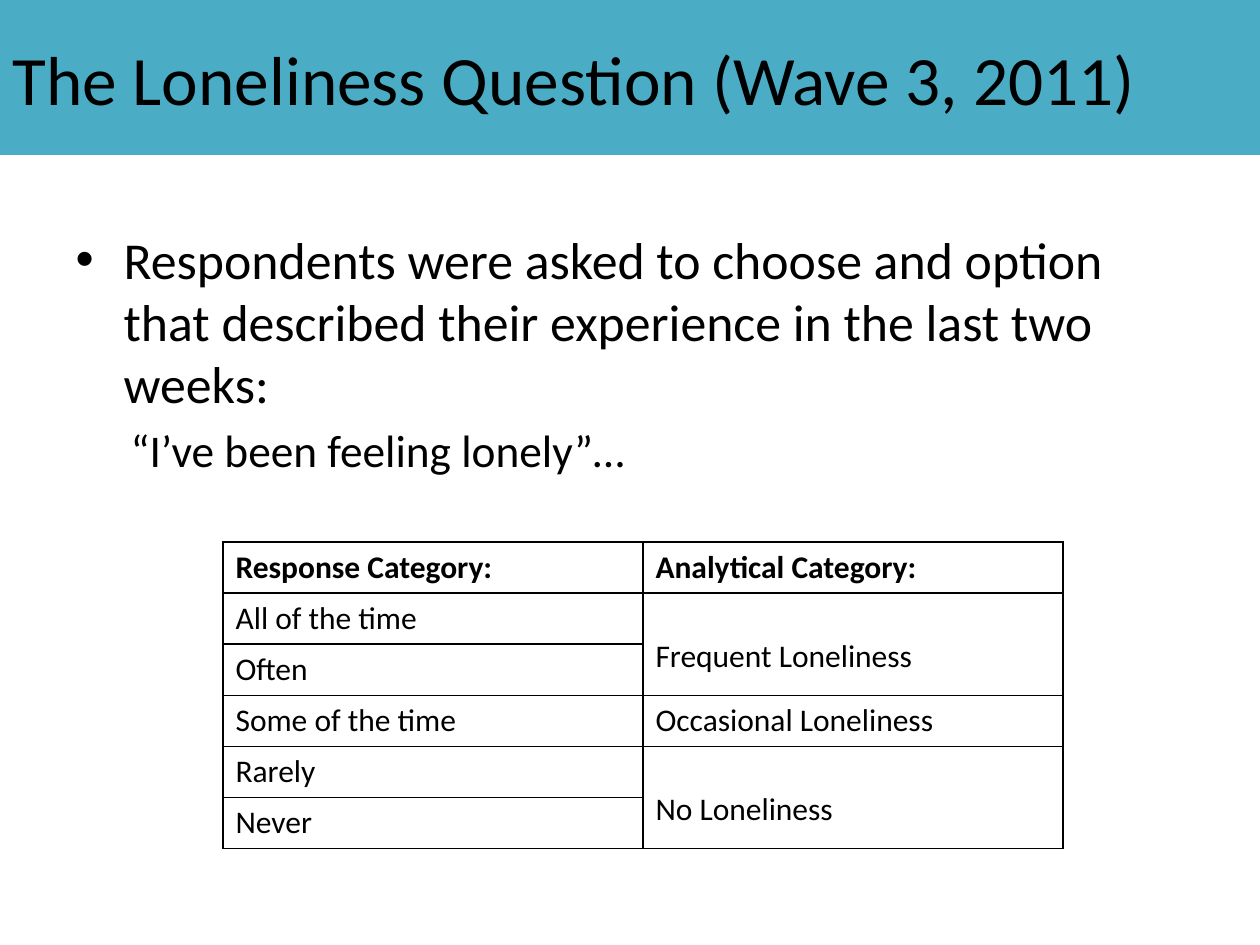
import pptx
import pptx.dml.color
import pptx.enum.text
import pptx.oxml
import pptx.oxml.ns
import pptx.util

PX = 914400 / 126
FONT = "Calibri"
COLORS = {"band": "4BACC6", "ink": "000000", "paper": "FFFFFF"}

QUESTION = ("Respondents were asked to choose and option that described "
            "their experience in the last two weeks:")
QUOTE = "“I’ve been feeling lonely”…"
RESPONSES = ["Response Category:", "All of the time", "Often",
             "Some of the time", "Rarely", "Never"]
ANALYTICAL = [("Analytical Category:", 0, 1), ("Frequent Loneliness", 1, 2),
              ("Occasional Loneliness", 3, 1), ("No Loneliness", 4, 2)]


def px(length):
    return pptx.util.Emu(round(length * PX))


def rgb(name):
    return pptx.dml.color.RGBColor.from_string(COLORS[name])


def place(shape, box):
    shape.left, shape.top, shape.width, shape.height = map(px, box)


def write(paragraph, text, size, bold=False, before=0, level=0):
    paragraph.level = level
    paragraph.alignment = pptx.enum.text.PP_ALIGN.LEFT
    paragraph.space_before = pptx.util.Pt(before)
    run = paragraph.add_run()
    run.text = text
    run.font.name = FONT
    run.font.size = pptx.util.Pt(size)
    run.font.bold = bold
    run.font.color.rgb = rgb("ink")


def set_bullet(paragraph, margin, indent, bullet=None):
    properties = paragraph._p.get_or_add_pPr()
    properties.set("marL", str(px(margin)))
    properties.set("indent", str(px(indent)))
    mark = f'a:buChar char="{bullet}"' if bullet else "a:buNone"
    properties.append(pptx.oxml.parse_xml(
        f'<{mark} {pptx.oxml.ns.nsdecls("a")}/>'))


def build_title(slide, box):
    title = slide.shapes.title
    place(title, box)
    title.fill.solid()
    title.fill.fore_color.rgb = rgb("band")
    frame = title.text_frame
    frame.auto_size = pptx.enum.text.MSO_AUTO_SIZE.NONE
    frame.vertical_anchor = pptx.enum.text.MSO_ANCHOR.MIDDLE
    write(frame.paragraphs[0], "The Loneliness Question (Wave 3, 2011)", 39.6)


def build_question(slide, box):
    body = slide.placeholders[1]
    place(body, box)
    frame = body.text_frame
    frame.auto_size = pptx.enum.text.MSO_AUTO_SIZE.NONE
    question = frame.paragraphs[0]
    write(question, QUESTION, 29.6, before=6)
    set_bullet(question, 48, -48, "•")
    quote = frame.add_paragraph()
    write(quote, QUOTE, 25.9, before=5, level=1)
    set_bullet(quote, 55, 0)


def style_cell(cell):
    cell.fill.solid()
    cell.fill.fore_color.rgb = rgb("paper")
    properties = cell._tc.get_or_add_tcPr()
    for position, side in enumerate(("lnL", "lnR", "lnT", "lnB")):
        properties.insert(position, pptx.oxml.parse_xml(
            f'<a:{side} {pptx.oxml.ns.nsdecls("a")} w="12700"><a:solidFill>'
            f'<a:srgbClr val="{COLORS["ink"]}"/></a:solidFill></a:{side}>'))


def build_categories(slide, box):
    rows = len(RESPONSES)
    table = slide.shapes.add_table(rows, 2, *map(px, box)).table
    for column in table.columns:
        column.width = px(box[2] / 2)
    for row in table.rows:
        row.height = px(box[3] / rows)
    for cell in table.iter_cells():
        style_cell(cell)
    for row, response in enumerate(RESPONSES):
        write(table.cell(row, 0).text_frame.paragraphs[0], response, 18,
              bold=row == 0)
    for category, row, span in ANALYTICAL:
        cell = table.cell(row, 1)
        if span > 1:
            cell.merge(table.cell(row + span - 1, 1))
            cell.margin_top = px(44)
        write(cell.text_frame.paragraphs[0], category, 18, bold=row == 0)


def main():
    deck = pptx.Presentation()
    deck.slide_width, deck.slide_height = px(1260), px(945)
    slide = deck.slides.add_slide(deck.slide_layouts[1])
    build_title(slide, (0, 0, 1260, 155))
    build_question(slide, (63, 221, 1134, 282))
    build_categories(slide, (223, 542, 840, 306))
    deck.save("out.pptx")


if __name__ == "__main__":
    main()
